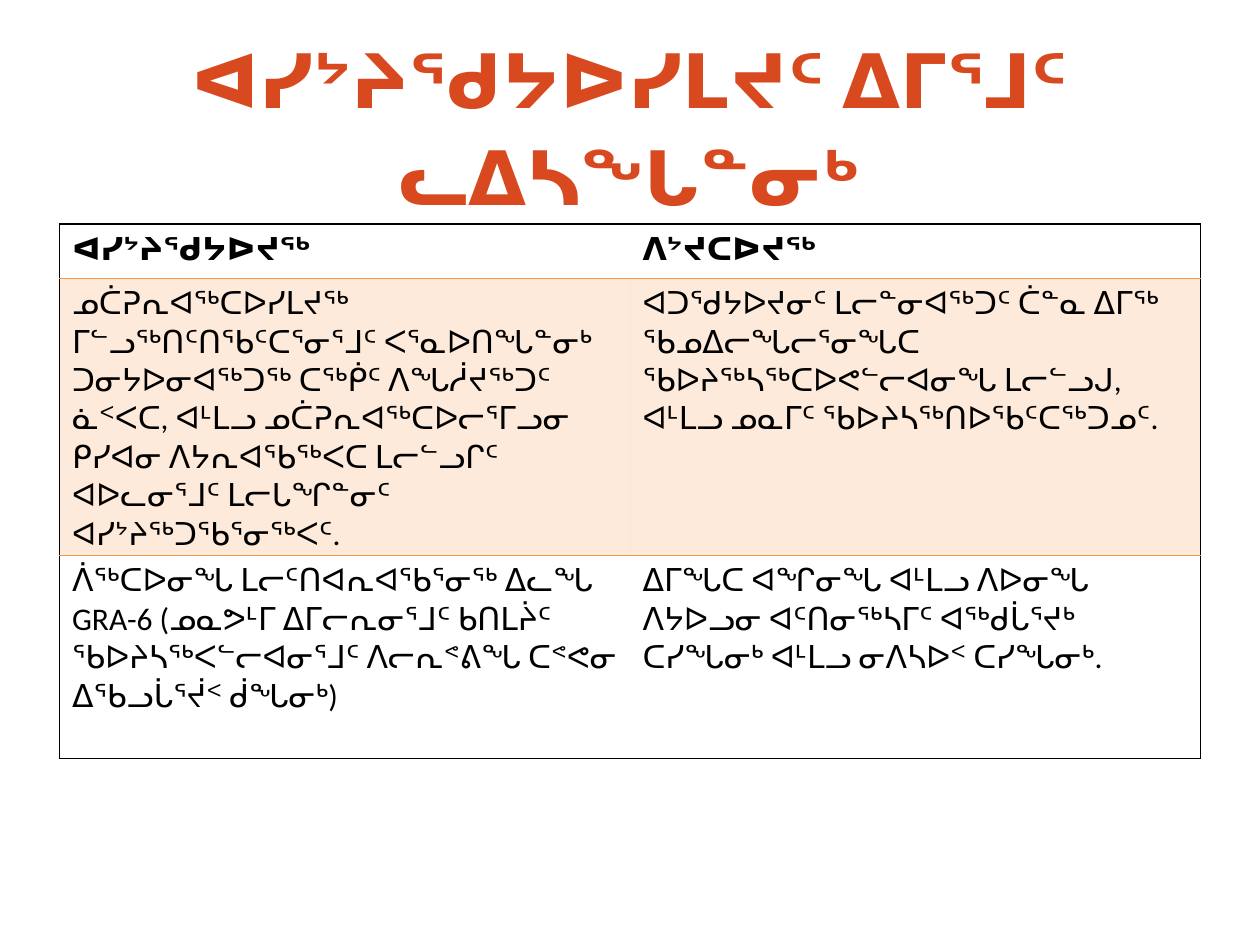
import lxml.etree
import pptx
import pptx.dml.color
import pptx.enum.text
import pptx.oxml.ns
import pptx.util
from pptx.util import Cm, Pt

RUST = pptx.dml.color.RGBColor(0xD8, 0x49, 0x1F)
BLACK = pptx.dml.color.RGBColor(0, 0, 0)
ORANGE = pptx.dml.color.RGBColor(0xF7, 0x96, 0x46)
PLAIN_TABLE_STYLE = "{2D5ABB26-0587-4C30-8999-92F81FD0307C}"

TITLE = "ᐊᓯᔾᔨᖁᔭᐅᓯᒪᔪᑦ ᐃᒥᕐᒧᑦ ᓚᐃᓴᖓᓐᓂᒃ"
ROWS = [
    ("ᐊᓯᔾᔨᖁᔭᐅᔪᖅ", "ᐱᔾᔪᑕᐅᔪᖅ"),
    ("ᓄᑖᕈᕆᐊᖅᑕᐅᓯᒪᔪᖅ ᒥᓪᓗᖅᑎᑦᑎᖃᑦᑕᕐᓂᕐᒧᑦ ᐸᕐᓇᐅᑎᖓᓐᓂᒃ ᑐᓂᔭᐅᓂᐊᖅᑐᖅ ᑕᖅᑮᑦ ᐱᖓᓲᔪᖅᑐᑦ "
     "ᓈᑉᐸᑕ, ᐊᒻᒪᓗ ᓄᑖᕈᕆᐊᖅᑕᐅᓕᕐᒥᓗᓂ ᑭᓯᐊᓂ ᐱᔭᕆᐊᖃᖅᐸᑕ ᒪᓕᓪᓗᒋᑦ ᐊᐅᓚᓂᕐᒧᑦ ᒪᓕᒐᖏᓐᓂᑦ "
     "ᐊᓯᔾᔨᖅᑐᖃᕐᓂᖅᐸᑦ.",
     "ᐊᑐᖁᔭᐅᔪᓂᑦ ᒪᓕᓐᓂᐊᖅᑐᑦ ᑖᓐᓇ ᐃᒥᖅ ᖃᓄᐃᓕᖓᓕᕐᓂᖓᑕ ᖃᐅᔨᖅᓴᖅᑕᐅᕙᓪᓕᐊᓂᖓ ᒪᓕᓪᓗᒍ, "
     "ᐊᒻᒪᓗ ᓄᓇᒥᑦ ᖃᐅᔨᓴᖅᑎᐅᖃᑦᑕᖅᑐᓄᑦ."),
    ("ᐲᖅᑕᐅᓂᖓ ᒪᓕᑦᑎᐊᕆᐊᖃᕐᓂᖅ ᐃᓚᖓ GRA-6 (ᓄᓇᕗᒻᒥ ᐃᒥᓕᕆᓂᕐᒧᑦ ᑲᑎᒪᔩᑦ "
     "ᖃᐅᔨᓴᖅᐸᓪᓕᐊᓂᕐᒧᑦ ᐱᓕᕆᕝᕕᖓ ᑕᕝᕙᓂ ᐃᖃᓗᒑᕐᔫᑉ ᑰᖓᓂᒃ)",
     "ᐃᒥᖓᑕ ᐊᖏᓂᖓ ᐊᒻᒪᓗ ᐱᐅᓂᖓ ᐱᔭᐅᓗᓂ ᐊᑦᑎᓂᖅᓴᒥᑦ ᐊᖅᑯᒑᕐᔪᒃ ᑕᓯᖓᓂᒃ ᐊᒻᒪᓗ ᓂᐱᓴᐅᑉ ᑕᓯᖓᓂᒃ."),
]
ROW_HEIGHTS = [Cm(1.09), Cm(3.91), Cm(4.09)]


def add_child(parent, tag, **attributes):
    return lxml.etree.SubElement(parent, pptx.oxml.ns.qn(tag), attributes)


def style_text(para, font_name, size, color, bold):
    for span in para.runs:
        span.font.name = font_name
        span.font.size = size
        span.font.color.rgb = color
        span.font.bold = bold


def add_title(page, left, top, width, height):
    box = page.shapes.add_textbox(left, top, width, height)
    frame = box.text_frame
    frame.word_wrap = True
    frame.vertical_anchor = pptx.enum.text.MSO_ANCHOR.MIDDLE
    frame.text = TITLE
    para = frame.paragraphs[0]
    para.alignment = pptx.enum.text.PP_ALIGN.CENTER
    para.line_spacing = 1.07
    para.space_after = Pt(8)
    style_text(para, "Lato", Pt(42.9), RUST, True)


def set_borders(cell, colors):
    """Draw 1 pt borders; colors maps the sides L, R, T, B to a colour."""
    properties = cell._tc.get_or_add_tcPr()
    lines = []
    for side in "LRTB":
        if side in colors:
            line = add_child(properties, f"a:ln{side}", w=str(Pt(1)))
            fill = add_child(line, "a:solidFill")
            add_child(fill, "a:srgbClr", val=str(colors[side]))
            lines.append(line)
    for position, line in enumerate(lines):
        properties.insert(position, line)


def shade(cell):
    """Fill the cell with orange at 20% opacity."""
    cell.fill.solid()
    cell.fill.fore_color.rgb = ORANGE
    color = cell._tc.tcPr.find(".//" + pptx.oxml.ns.qn("a:srgbClr"))
    add_child(color, "a:alpha", val="20000")


def add_changes_table(page, left, top, width):
    table = page.shapes.add_table(
        len(ROWS), 2, left, top, width, sum(ROW_HEIGHTS)).table
    table._tbl.tblPr.find(pptx.oxml.ns.qn("a:tableStyleId")).text = PLAIN_TABLE_STYLE
    table.horz_banding = False
    last = len(ROWS) - 1
    for row, texts in enumerate(ROWS):
        table.rows[row].height = ROW_HEIGHTS[row]
        for column, text in enumerate(texts):
            cell = table.cell(row, column)
            cell.text = text
            style_text(cell.text_frame.paragraphs[0], "Calibri", Pt(18), BLACK, row == 0)
            if row == 1:
                shade(cell)
            else:
                cell.fill.background()
            borders = {"LR"[column]: BLACK}
            if row == 0:
                borders.update(T=BLACK, B=ORANGE)
            elif row == 1:
                borders["T"] = ORANGE
            elif row == last:
                borders["B"] = BLACK
            set_borders(cell, borders)


def main():
    deck = pptx.Presentation()
    deck.slide_width, deck.slide_height = Cm(25.4), Cm(19.05)
    page = deck.slides.add_slide(deck.slide_layouts[6])
    add_title(page, Cm(0), Cm(0.91), deck.slide_width, Cm(3.18))
    margin = Cm(1.2)
    add_changes_table(page, margin, Cm(4.52), deck.slide_width - 2 * margin)
    deck.save("out.pptx")


if __name__ == "__main__":
    main()
